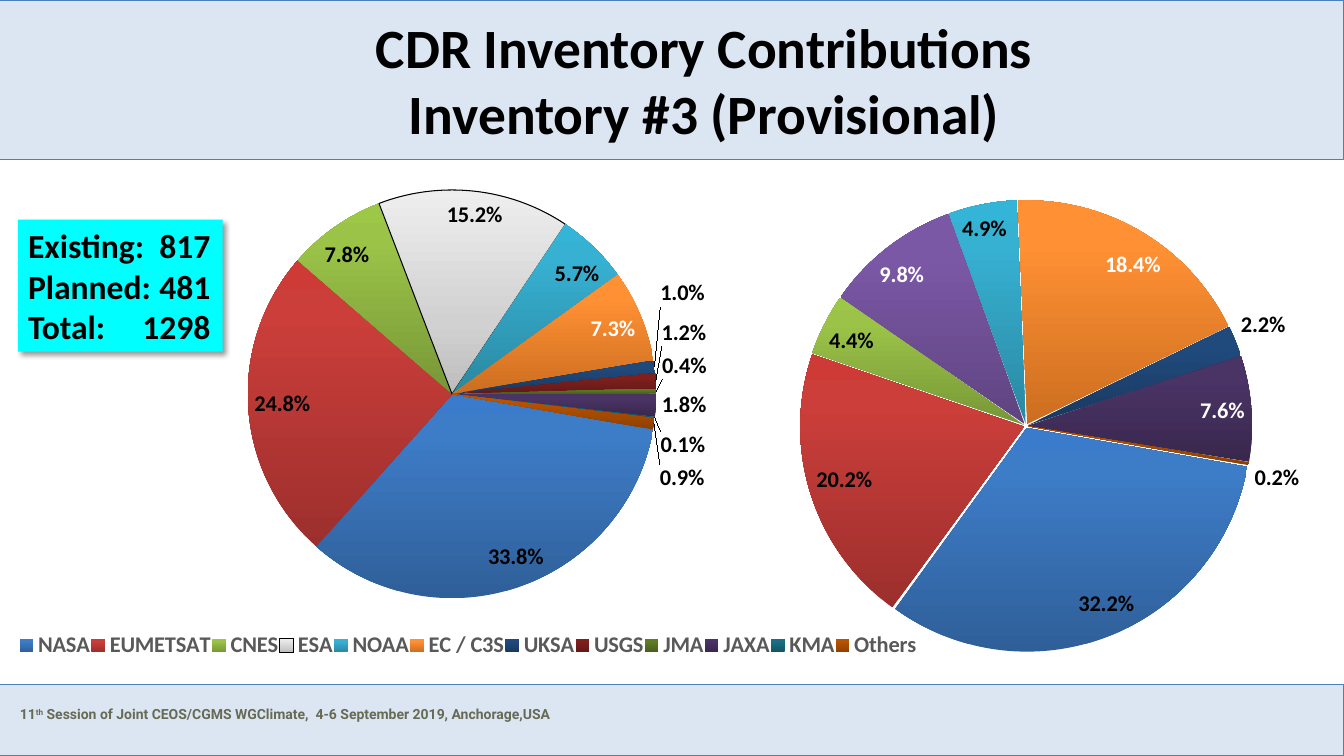
from lxml import etree
from pptx import Presentation
from pptx.chart.data import CategoryChartData
from pptx.dml.color import RGBColor
from pptx.enum.chart import XL_CHART_TYPE as CT, XL_LABEL_POSITION as LP, XL_LEGEND_POSITION as LG
from pptx.enum.shapes import MSO_SHAPE
from pptx.enum.text import MSO_ANCHOR, PP_ALIGN
from pptx.oxml import parse_xml
from pptx.util import Inches, Pt

NS = ('xmlns:c="http://schemas.openxmlformats.org/drawingml/2006/chart" '
      'xmlns:a="http://schemas.openxmlformats.org/drawingml/2006/main"')


def xml(body):
    tag, rest = body.split(' ', 1) if ' ' in body.split('>')[0] else body.split('>', 1)
    sep = ' ' if ' ' in body.split('>')[0] else '>'
    return parse_xml(f'{tag} {NS}{sep}{rest}')


def style(font, size, color, name='Calibri'):
    font.size, font.bold, font.name = Pt(size), True, name
    font.color.rgb = RGBColor.from_string(color)


prs = Presentation()
prs.slide_width, prs.slide_height = Inches(13.33), Inches(7.5)
s = prs.slides.add_slide(prs.slide_layouts[5])

for top, height in [(6.79, 0.71), (0, 1.58)]:
    band = s.shapes.add_shape(MSO_SHAPE.RECTANGLE, 0, Inches(top), Inches(13.33), Inches(height))
    band.shadow.inherit = False
    band.fill.solid()
    band.fill.fore_color.rgb = RGBColor.from_string('DCE6F2')
    band.line.color.rgb = RGBColor.from_string('4B7EBC')
    band.line.width = Pt(0.75)

footer = s.shapes.add_textbox(Inches(0.1), Inches(6.95), Inches(10.64), Inches(0.27))
footer.text_frame.word_wrap = True
p = footer.text_frame.paragraphs[0]
for text, baseline in [('11', 0), ('th', 30000),
                       (' Session of Joint CEOS/CGMS WGClimate,  4-6 September 2019, Anchorage,USA', 0)]:
    r = p.add_run()
    r.text = text
    style(r.font, 10, '676A55', 'Roboto')
    if baseline:
        r._r.get_or_add_rPr().set('baseline', str(baseline))

title = s.shapes.title
title.element.getparent().append(title.element)
title.left, title.top, title.width, title.height = Inches(2.43), Inches(0.16), Inches(9.11), Inches(1.25)
tf = title.text_frame
tf.word_wrap = True
tf.vertical_anchor = MSO_ANCHOR.MIDDLE
p = tf.paragraphs[0]
p.alignment = PP_ALIGN.CENTER
for i, text in enumerate(['CDR Inventory Contributions', 'Inventory #3 (Provisional)']):
    if i:
        p.add_line_break()
    r = p.add_run()
    r.text = text
    style(r.font, 39.6, '000000')

agencies = ['NASA', 'EUMETSAT', 'CNES', 'ESA', 'NOAA', 'EC / C3S',
            'UKSA', 'USGS', 'JMA', 'JAXA', 'KMA', 'Others']
gradients = ['2F5F99 3D7CC7 3A7CCB', '9C2F2D CB3E3A CE3B37', '779737 9BC348 9DC746',
             '5F4480 7B58A6 7C57A8', '2A88A2 37B1D2 34B4D6', 'CC6E20 FF9034 FF9136',
             '19395F 204A7C 1E4A7E', '621917 7F201E 811F1C', '495F1C 5F7C25 607E23',
             '39284E 4A3365 4A3366', '145566 1A6E85 187088', '8E4000 B85300 B95400']
existing = dict(box=(0.18, 1.41, 8.93, 6.09), cats=agencies, plot=(0.255, 0.078, 0.454, 0.665),
                vals=[33.8, 24.8, 7.8, 15.2, 5.7, 7.3, 1, 1.2, 0.4, 1.8, 0.1, 0.9],
                white=[5], legend=(0, 0.79, 1, 0.06))
planned = dict(box=(6.69, 1.54, 7.08, 5.06), cats=[str(n) for n in range(1, 13)],
               plot=(0.176, 0.088, 0.633, 0.886),
               vals=[32.2, 20.2, 4.4, 9.8, 4.9, 18.4, 2.2, 0, 0, 7.6, 0, 0.2],
               white=[3, 5, 9], legend=None)

for pie in (existing, planned):
    data = CategoryChartData()
    data.categories = pie['cats']
    data.add_series('Series 1', pie['vals'])
    chart = s.shapes.add_chart(CT.PIE, *map(Inches, pie['box']), data).chart
    chart.has_title = False
    chart.font.size, chart.font.name = Pt(10), 'Calibri'
    chart.has_legend = pie['legend'] is not None
    plot = chart.plots[0]
    plot.vary_by_categories = True
    series = plot.series[0]
    ser = series._element

    area = chart._chartSpace.chart.plotArea
    for old in area.xpath('c:layout'):
        area.remove(old)
    spots = [(area, 0, pie['plot'], '<c:layoutTarget val="inner"/>')]
    if chart.has_legend:
        legend = chart.legend
        legend.position = LG.BOTTOM
        legend.include_in_layout = False
        style(legend.font, 16, '595959')
        for old in legend._element.xpath('c:layout'):
            legend._element.remove(old)
        spots.append((legend._element, 1, pie['legend'], ''))
    for parent, index, (x, y, w, h), target in spots:
        parent.insert(index, xml(
            f'<c:layout><c:manualLayout>{target}<c:xMode val="edge"/><c:yMode val="edge"/>'
            f'<c:x val="{x}"/><c:y val="{y}"/><c:w val="{w}"/><c:h val="{h}"/>'
            '</c:manualLayout></c:layout>'))

    labels = series.data_labels
    labels.show_value, labels.show_percentage = False, True
    labels.number_format, labels.number_format_is_linked = '0.0%', False
    labels.position = LP.BEST_FIT
    style(labels.font, 16, '000000')

    for i, (value, colors) in enumerate(zip(pie['vals'], gradients)):
        point = series.points[i]
        esa = pie is existing and i == 3
        if esa:
            colors = 'BDBDBD D1D1D1 EEEEEE'
            point.format.line.color.rgb = RGBColor.from_string('000000')
            point.format.line.width = Pt(0.75)
        else:
            point.format.line.fill.background()
        stops = ''.join(f'<a:gs pos="{pos}000"><a:srgbClr val="{c}"/></a:gs>'
                        for pos, c in zip((0, 35 if esa else 80, 100), colors.split()))
        ser.xpath('c:dPt/c:spPr')[i].insert(0, xml(
            f'<a:gradFill rotWithShape="1"><a:gsLst>{stops}</a:gsLst>'
            '<a:lin ang="16200000" scaled="0"/></a:gradFill>'))
        if i in pie['white']:
            label = point.data_label
            style(label.font, 16, 'FFFFFF')
            label.position = LP.BEST_FIT
            d = ser.xpath(f'c:dLbls/c:dLbl[c:idx/@val="{i}"]')[0]
            d.xpath('c:idx')[0].addnext(xml('<c:numFmt formatCode="0.0%" sourceLinked="0"/>'))
            d.xpath('c:showVal')[0].set('val', '0')
            d.xpath('c:showPercent')[0].set('val', '1')
        elif not value:
            style(point.data_label.font, 16, '000000')
            d = ser.xpath(f'c:dLbls/c:dLbl[c:idx/@val="{i}"]')[0]
            for child in list(d)[1:]:
                d.remove(child)
            d.append(xml('<c:delete val="1"/>'))
    if pie is planned:
        ser.xpath('c:dPt')[0].addprevious(xml('<c:explosion val="1"/>'))
    for old in plot._element.xpath('c:firstSliceAng'):
        plot._element.remove(old)
    plot._element.append(xml('<c:firstSliceAng val="100"/>'))

totals = s.shapes.add_shape(MSO_SHAPE.RECTANGLE, Inches(0.18), Inches(2.18), Inches(2.03), Inches(1.31))
totals.fill.solid()
totals.fill.fore_color.rgb = RGBColor.from_string('00FFFF')
totals.line.fill.background()
totals.shadow.inherit = False
effects = totals._element.spPr.xpath('a:effectLst')[0]
effects.append(xml('<a:outerShdw blurRad="50800" dist="38100" dir="2700000" algn="tl" rotWithShape="0">'
                   '<a:srgbClr val="000000"><a:alpha val="40000"/></a:srgbClr></a:outerShdw>'))
tf = totals.text_frame
tf.word_wrap = True
for i, (name, count) in enumerate([('Existing:', 817), ('Planned:', 481), ('Total:', 1298)]):
    p = tf.add_paragraph() if i else tf.paragraphs[0]
    p.alignment = PP_ALIGN.LEFT
    p._p.get_or_add_pPr().append(xml(f'<a:tabLst><a:tab pos="{Inches(1.81)}" algn="r"/></a:tabLst>'))
    r = p.add_run()
    r.text = f'{name}\t{count}'
    style(r.font, 24, '000000')

prs.save('out.pptx')
